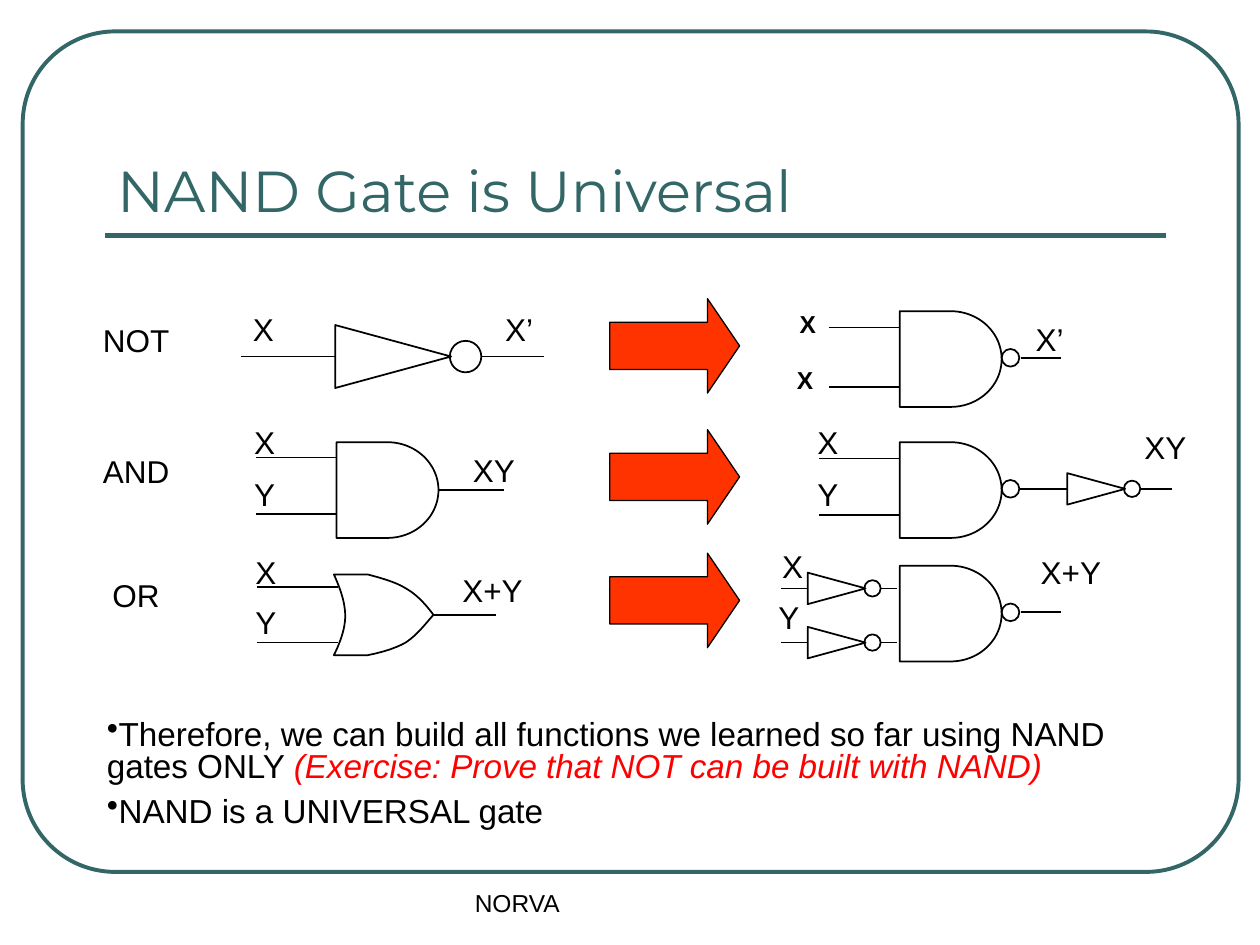
from lxml.etree import SubElement
from pptx import Presentation
from pptx.dml.color import RGBColor
from pptx.enum.shapes import MSO_CONNECTOR as Link, MSO_SHAPE as Kind
from pptx.enum.text import MSO_ANCHOR as Anchor, MSO_AUTO_SIZE as Fit, PP_ALIGN as Align
from pptx.oxml.ns import qn
from pptx.util import Inches, Pt

TEAL = RGBColor(0x33, 0x66, 0x66)
BLACK = RGBColor(0, 0, 0)
RED = RGBColor(0xFF, 0, 0)
ORANGE = RGBColor(0xFF, 0x33, 0)

TITLE = "NAND Gate is Universal"
FOOTER = "NORVA"
BULLETS = [
    [("Therefore, we can build all functions we learned so far using NAND gates ONLY ", {}),
     ("(Exercise: Prove that NOT can be built with NAND)", {"italic": True, "color": RED})],
    [("NAND is a UNIVERSAL gate", {})],
]

NAME_X, ARROW_X, GATE_X, NAND_X = 1.08, 4.84, 2.67, 7.14
GATE_W, GATE_H = 0.81, 0.76
LARGE = {"length": 0.92, "height": 0.5, "bubble": 0.25}
SMALL = {"length": 0.46, "height": 0.25, "bubble": 0.13}
PLAIN = {"size": 18}
BOLD = {"size": 14, "bold": True}
LABEL_WIDTHS = {"X": 0.38, "Y": 0.38, "X’": 0.46, "XY": 0.56, "X+Y": 0.7,
                "NOT": 0.88, "AND": 0.92, "OR": 0.66}

ROWS = [
    {"name": "NOT", "middle": 2.85,
     "inverters": [(2.66, -0.02, LARGE)],
     "wires": [(1.91, 2.66, -0.02), (3.82, 4.32, -0.02), (6.58, 7.14, -0.25), (6.58, 7.14, 0.22)],
     "labels": [("X", 2.09, -0.44, PLAIN), ("X’", 4.12, -0.44, PLAIN), ("X’", 8.33, -0.36, PLAIN),
                ("X", 6.41, -0.45, BOLD), ("X", 6.39, 0, BOLD)]},
    {"name": "AND", "middle": 3.89,
     "inverters": [(8.47, -0.01, SMALL)],
     "wires": [(2.03, 2.67, -0.26), (2.03, 2.67, 0.19), (3.48, 4, 0), (6.5, 7.14, -0.25),
               (6.5, 7.14, 0.2), (8.09, 8.47, -0.01), (9.05, 9.3, -0.01)],
     "labels": [("X", 2.1, -0.58, PLAIN), ("Y", 2.1, -0.17, PLAIN), ("XY", 3.92, -0.36, PLAIN),
                ("X", 6.57, -0.58, PLAIN), ("Y", 6.57, -0.17, PLAIN), ("XY", 9.25, -0.54, PLAIN)]},
    {"name": "OR", "middle": 4.87,
     "inverters": [(6.41, -0.2, SMALL), (6.41, 0.23, SMALL)],
     "wires": [(2.04, 2.68, -0.21), (2.04, 2.68, 0.23), (3.44, 3.94, 0.01), (6.2, 6.41, -0.2),
               (6.99, 7.12, -0.2), (6.2, 6.41, 0.23), (6.99, 7.12, 0.23)],
     "labels": [("X", 2.11, -0.53, PLAIN), ("Y", 2.11, -0.13, PLAIN), ("X+Y", 3.91, -0.39, PLAIN),
                ("X", 6.29, -0.58, PLAIN), ("Y", 6.26, -0.17, PLAIN), ("X+Y", 8.5, -0.53, PLAIN)]},
]
OR_CURVES = [
    [(2.65, 4.56), (2.7, 4.67), (2.74, 4.78), (2.74, 4.89)],
    [(2.74, 4.89), (2.74, 4.99), (2.7, 5.1), (2.65, 5.2)],
    [(2.92, 5.2), (3.02, 5.18), (3.13, 5.15), (3.22, 5.1)],
    [(3.22, 5.1), (3.31, 5.04), (3.37, 4.96), (3.44, 4.88)],
    [(3.44, 4.88), (3.38, 4.8), (3.31, 4.72), (3.22, 4.67)],
    [(3.22, 4.67), (3.14, 4.62), (3.03, 4.59), (2.92, 4.56)],
]


def add_span(para, text, **changes):
    style = {"name": "Arial", "size": 18, "bold": False, "italic": False, "color": BLACK} | changes
    span = para.add_run()
    span.text = text
    span.font.color.rgb = style.pop("color")
    style["size"] = Pt(style["size"])
    for key, value in style.items():
        setattr(span.font, key, value)


def add_box(page, left, top, width, height, wrap=True):
    box = page.shapes.add_textbox(*map(Inches, (left, top, width, height)))
    box.text_frame.word_wrap = wrap
    return box.text_frame


def add_label(page, text, center, top, style=PLAIN):
    width = LABEL_WIDTHS[text]
    para = add_box(page, center - width / 2, top, width, 0.4, wrap=False).paragraphs[0]
    para.alignment = Align.CENTER
    add_span(para, text, **style)


def paint(shape, fill=None, line=BLACK, weight=1):
    shape.shadow.inherit = False
    if fill is None:
        shape.fill.background()
    else:
        shape.fill.solid()
        shape.fill.fore_color.rgb = fill
    shape.line.color.rgb = line
    shape.line.width = Pt(weight)


def add_shape(page, kind, left, top, width, height, **look):
    shape = page.shapes.add_shape(kind, *map(Inches, (left, top, width, height)))
    paint(shape, **look)
    return shape


def add_wire(page, start, end, y, color=BLACK, weight=1):
    wire = page.shapes.add_connector(Link.STRAIGHT, *map(Inches, (start, y, end, y)))
    wire.line.color.rgb = color
    wire.line.width = Pt(weight)
    SubElement(wire.element.spPr, qn("a:effectLst"))


def add_bubble(page, left, middle, size):
    add_shape(page, Kind.OVAL, left, middle - size / 2, size, size)


def add_inverter(page, left, middle, length, height, bubble):
    triangle = add_shape(page, Kind.ISOSCELES_TRIANGLE, left + (length - height) / 2,
                         middle - length / 2, height, length)
    triangle.rotation = 90
    add_bubble(page, left + length - 0.01, middle, bubble)


def add_and(page, left, middle):
    add_shape(page, Kind.FLOWCHART_DELAY, left, middle - GATE_H / 2, GATE_W, GATE_H)


def add_nand(page, left, middle):
    add_and(page, left, middle)
    add_bubble(page, left + GATE_W, middle - 0.01, 0.14)
    add_wire(page, left + 0.96, left + 1.28, middle - 0.01)


def curve_points(curve, steps=12):
    for step in range(steps + 1):
        t = step / steps
        weights = ((1 - t) ** 3, 3 * t * (1 - t) ** 2, 3 * t * t * (1 - t), t ** 3)
        yield tuple(Inches(sum(w * point[axis] for w, point in zip(weights, curve)))
                    for axis in (0, 1))


def add_or(page):
    points = [point for curve in OR_CURVES for point in curve_points(curve)]
    builder = page.shapes.build_freeform(*points[0])
    builder.add_line_segments(points[1:], close=True)
    paint(builder.convert_to_shape())


def add_row(page, row):
    middle = row["middle"]
    add_label(page, row["name"], NAME_X, middle - 0.35)
    arrow = add_shape(page, Kind.RIGHT_ARROW, ARROW_X, middle - 0.48, 1.03, 0.75,
                      fill=ORANGE, weight=0.75)
    arrow.adjustments[1] = 0.34
    add_nand(page, NAND_X, middle)
    for left, offset, size in row["inverters"]:
        add_inverter(page, left, middle + offset, **size)
    for start, end, offset in row["wires"]:
        add_wire(page, start, end, middle + offset)
    for text, center, offset, style in row["labels"]:
        add_label(page, text, center, middle + offset, style)


def add_title(page):
    title = page.shapes.title
    title.left, title.top, title.width, title.height = map(Inches, (0.83, 0.58, 8.41, 1.25))
    frame = title.text_frame
    for key, value in {"vertical_anchor": Anchor.BOTTOM, "auto_size": Fit.NONE,
                       "word_wrap": True}.items():
        setattr(frame, key, value)
    frame.paragraphs[0].alignment = Align.LEFT
    add_span(frame.paragraphs[0], TITLE, name="Montserrat", size=33, color=TEAL)


def add_bullets(page):
    frame = add_box(page, 0.75, 5.67, 8.58, 1)
    for index, spans in enumerate(BULLETS):
        para = frame.add_paragraph() if index else frame.paragraphs[0]
        para.line_spacing = 0.8
        para.space_before = Pt(7.8)
        SubElement(para._p.get_or_add_pPr(), qn("a:buChar"), char="•")
        for text, changes in spans:
            add_span(para, text, size=19, **changes)


def main():
    deck = Presentation()
    deck.slide_width, deck.slide_height = Inches(10), Inches(7.5)
    page = deck.slides.add_slide(deck.slide_layouts[5])
    border = add_shape(page, Kind.ROUNDED_RECTANGLE, 0.18, 0.25, 9.65, 6.67, line=TEAL, weight=2.25)
    border.adjustments[0] = 0.11
    add_wire(page, 0.83, 9.25, 1.87, TEAL, 3)
    add_title(page)
    add_bullets(page)
    add_span(add_box(page, 3.67, 7, 3.16, 0.5).paragraphs[0], FOOTER, size=14)
    for row in ROWS:
        add_row(page, row)
    add_and(page, GATE_X, ROWS[1]["middle"])
    add_or(page)
    deck.save("out.pptx")


if __name__ == "__main__":
    main()
